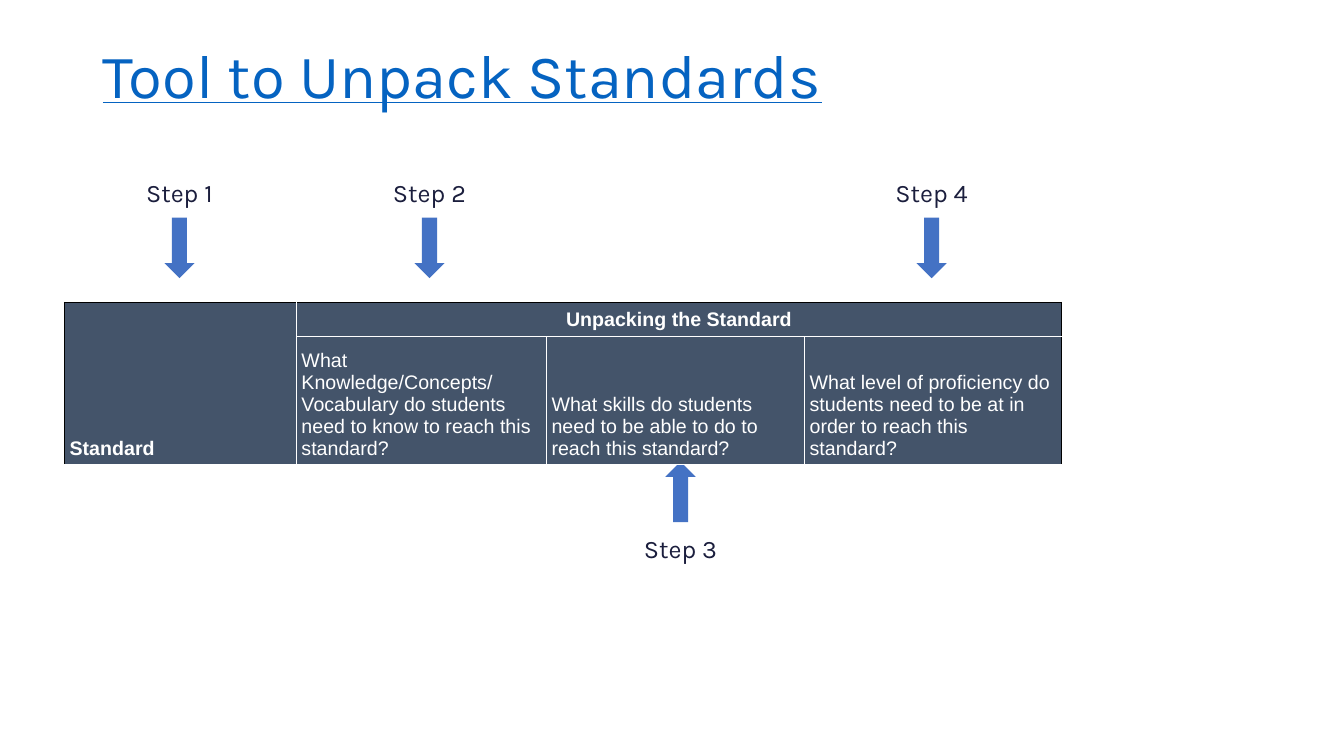
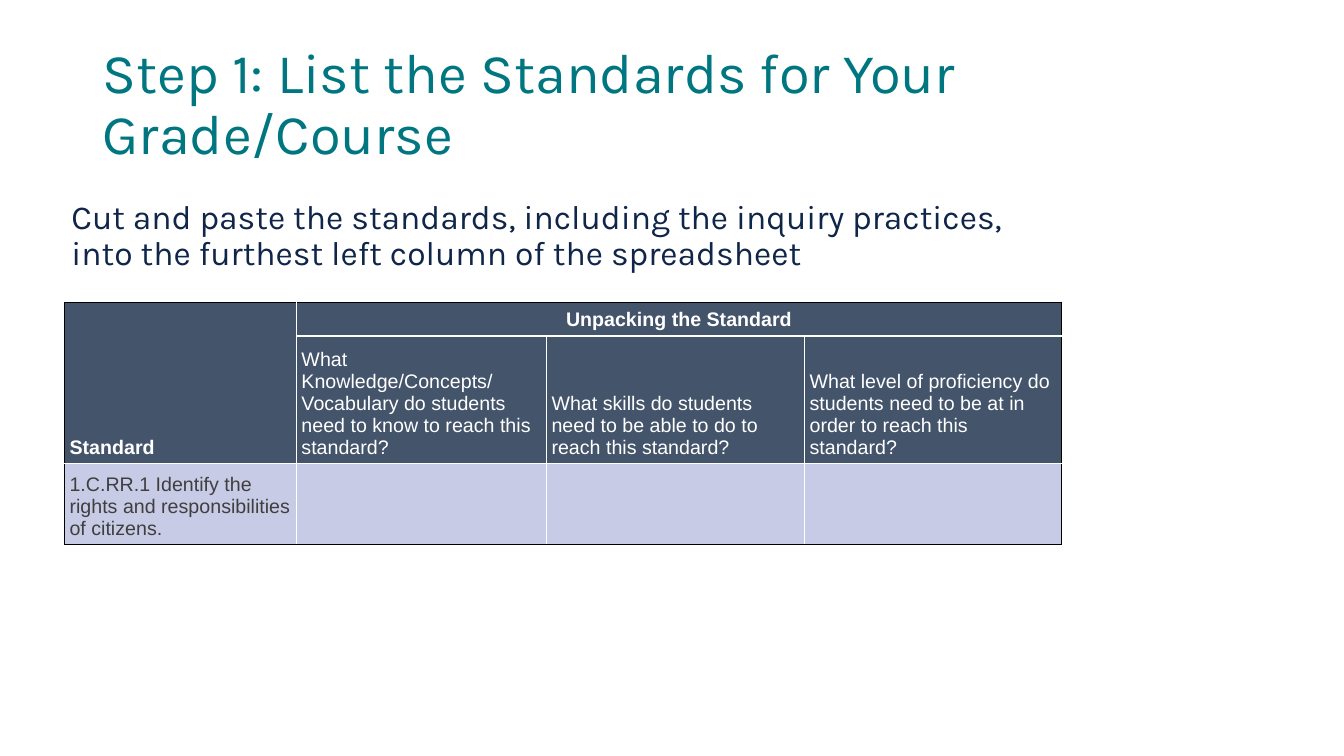
from dataclasses import dataclass

from lxml.etree import SubElement
from pptx import Presentation
from pptx.dml.color import RGBColor
from pptx.enum.shapes import MSO_SHAPE as Shape
from pptx.enum.text import MSO_ANCHOR as Anchor, MSO_AUTO_SIZE as AutoSize, PP_ALIGN as Align
from pptx.oxml.ns import qn
from pptx.util import Emu, Pt

# Shared scale, fonts and colours
EMU_PER_PX = 9144  # 100 px to the inch
HEADING_FONT, TABLE_FONT = "Karla", "Arial"
LINK_BLUE, TEAL, NAVY, INK = "0563C1", "007780", "102649", "1B1E3D"
ARROW_BLUE, SLATE, LAVENDER = "4472C4", "44546A", "C8CBE6"
WHITE, BLACK, GRAY = "FFFFFF", "000000", "3F3F3F"

# Shared table content and grid
TABLE_LEFT, TABLE_TOP = 64, 300
COLUMN_WIDTHS = (230, 248, 256, 255)
CELL_INSET = 5
HEADER_ROWS = (
    ("Standard", "Unpacking the Standard", "", ""),
    ("",
     "What Knowledge/Concepts/ Vocabulary do students need to know to reach this standard?",
     "What skills do students need to be able to do to reach this standard?",
     "What level of proficiency do students need to be at in order to reach this standard?"),
)
EXAMPLE_ROW = ("1.C.RR.1 Identify the rights and responsibilities of citizens.", "", "", "")


@dataclass(frozen=True)
class TextStyle:
    size: int
    color: str
    font: str = HEADING_FONT
    bold: bool = False
    underline: bool = False
    align: Align = Align.LEFT
    line_spacing: float = 1.0


@dataclass(frozen=True)
class Step:
    number: int
    label_top: int
    arrow_top: int
    rotation: int = 0

    @property
    def left(self) -> int:
        return 128 + (self.number - 1) * 746 // 3


STEPS = (
    Step(1, 171, 216),
    Step(2, 171, 216),
    Step(3, 524, 458, rotation=180),
    Step(4, 171, 216),
)
LABEL_WIDTH, LABEL_HEIGHT = 100, 40
ARROW_WIDTH, ARROW_HEIGHT = 30, 60


def px(length: int) -> Emu:
    return Emu(length * EMU_PER_PX)


def rgb(color: str) -> RGBColor:
    return RGBColor.from_string(color)


def write(frame, text: str, style: TextStyle) -> None:
    frame.text = text
    frame.word_wrap = True
    para = frame.paragraphs[0]
    para.alignment = style.align
    para.line_spacing = style.line_spacing
    for span in para.runs:
        font = span.font
        font.name, font.size, font.bold = style.font, Pt(style.size), style.bold
        font.underline = style.underline
        font.color.rgb = rgb(style.color)


def add_title_page(deck, title: str, style: TextStyle):
    page = deck.slides.add_slide(deck.slide_layouts[5])
    box = page.shapes.title
    box.left, box.top, box.width, box.height = px(92), px(40), px(1150), px(145)
    write(box.text_frame, title, style)
    box.text_frame.vertical_anchor = Anchor.TOP
    box.text_frame.auto_size = AutoSize.NONE
    return page


def add_text(page, left: int, top: int, width: int, height: int,
             text: str, style: TextStyle) -> None:
    box = page.shapes.add_textbox(px(left), px(top), px(width), px(height))
    write(box.text_frame, text, style)


def add_step(page, step: Step) -> None:
    add_text(page, step.left, step.label_top, LABEL_WIDTH, LABEL_HEIGHT,
             f"Step {step.number}", TextStyle(18, INK, align=Align.CENTER))
    arrow_left = step.left + (LABEL_WIDTH - ARROW_WIDTH) // 2
    arrow = page.shapes.add_shape(Shape.DOWN_ARROW, px(arrow_left), px(step.arrow_top),
                                  px(ARROW_WIDTH), px(ARROW_HEIGHT))
    arrow.rotation = step.rotation
    arrow.shadow.inherit = False
    arrow.fill.solid()
    arrow.fill.fore_color.rgb = rgb(ARROW_BLUE)
    arrow.line.fill.background()


def set_borders(cell, left: str, right: str, top: str, bottom: str) -> None:
    properties = cell._tc.get_or_add_tcPr()
    for index, (side, color) in enumerate(zip("LRTB", (left, right, top, bottom))):
        line = SubElement(properties, qn(f"a:ln{side}"), w=str(Pt(1)))
        fill = SubElement(line, qn("a:solidFill"))
        SubElement(fill, qn("a:srgbClr"), val=color)
        properties.insert(index, line)


def style_cell(cell, text: str, row: int, column: int, row_count: int) -> None:
    is_header = row < len(HEADER_ROWS)
    is_banner = cell.is_merge_origin and cell.span_width > 1
    cell.fill.solid()
    cell.fill.fore_color.rgb = rgb(SLATE if is_header else LAVENDER)
    cell.margin_left = cell.margin_right = px(CELL_INSET)
    cell.margin_top = cell.margin_bottom = px(CELL_INSET)
    cell.vertical_anchor = Anchor.MIDDLE if is_banner else Anchor.BOTTOM
    write(cell.text_frame, text,
          TextStyle(14, WHITE if is_header else GRAY, TABLE_FONT, bold=row == 0,
                    align=Align.CENTER if is_banner else Align.LEFT))
    # The outer edge is black, except below a table that has only headings
    at_right = column + cell.span_width == len(COLUMN_WIDTHS)
    at_bottom = not is_header and row == row_count - 1
    set_borders(cell,
                left=BLACK if column == 0 else WHITE,
                right=BLACK if at_right else WHITE,
                top=BLACK if row == 0 else WHITE,
                bottom=BLACK if at_bottom else WHITE)


def add_standards_table(page, rows: tuple, heights: tuple[int, ...]) -> None:
    table = page.shapes.add_table(len(rows), len(COLUMN_WIDTHS), px(TABLE_LEFT), px(TABLE_TOP),
                                  px(sum(COLUMN_WIDTHS)), px(sum(heights))).table
    table.first_row = table.horz_banding = False
    for column, width in zip(table.columns, COLUMN_WIDTHS):
        column.width = px(width)
    for row, height in zip(table.rows, heights):
        row.height = px(height)
    table.cell(0, 0).merge(table.cell(1, 0))
    table.cell(0, 1).merge(table.cell(0, 3))
    for row, texts in enumerate(rows):
        for column, text in enumerate(texts):
            cell = table.cell(row, column)
            if not cell.is_spanned:
                style_cell(cell, text, row, column, len(rows))


def build_overview(deck) -> None:
    page = add_title_page(deck, "Tool to Unpack Standards",
                          TextStyle(44, LINK_BLUE, underline=True, line_spacing=0.9))
    for step in STEPS:
        add_step(page, step)
    add_standards_table(page, HEADER_ROWS, (34, 126))


def build_first_step(deck) -> None:
    page = add_title_page(deck, "Step 1: List the Standards for Your Grade/Course",
                          TextStyle(40, TEAL, line_spacing=0.9))
    add_text(page, 61, 194, 1005, 109,
             "Cut and paste the standards, including the inquiry practices, "
             "into the furthest left column of the spreadsheet",
             TextStyle(24, NAVY, line_spacing=0.9))
    add_standards_table(page, (*HEADER_ROWS, EXAMPLE_ROW), (32, 120, 80))


def main() -> None:
    deck = Presentation()
    deck.slide_width, deck.slide_height = px(1333), px(750)
    build_overview(deck)
    build_first_step(deck)
    deck.save("out.pptx")


if __name__ == "__main__":
    main()
